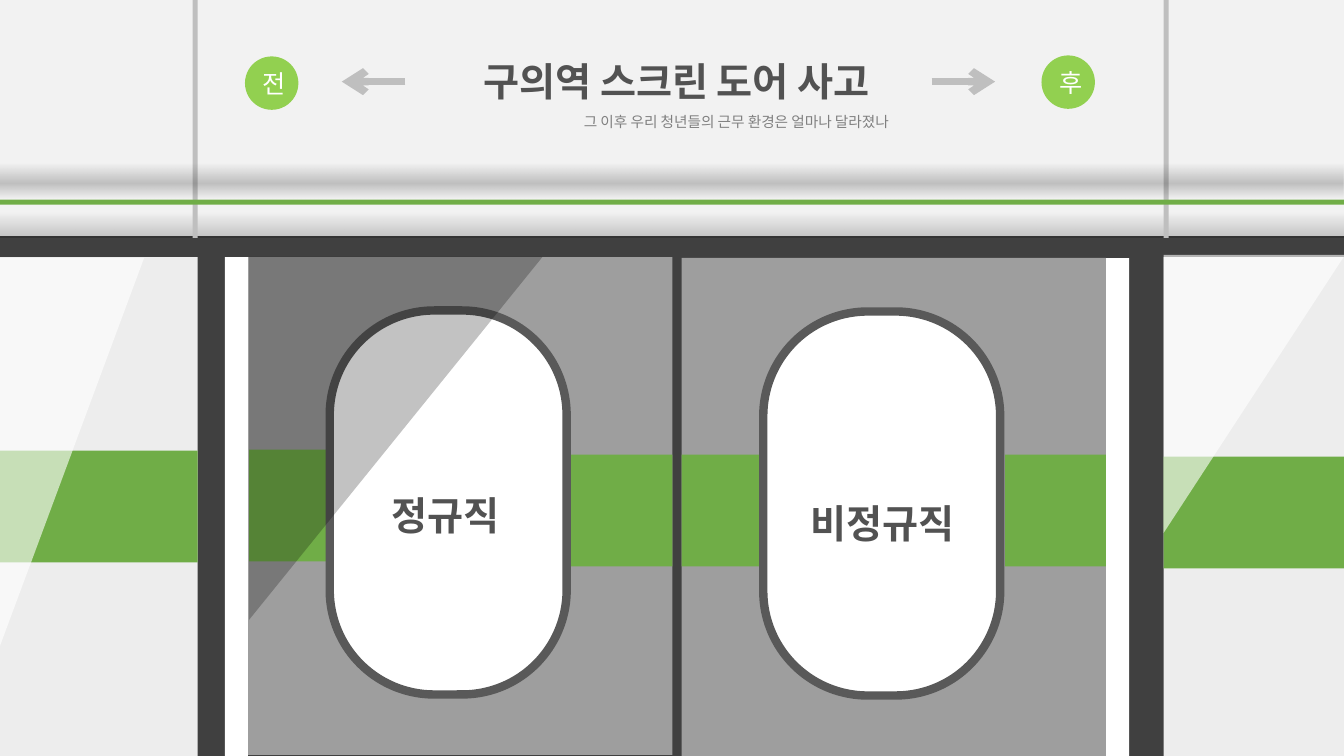
from pptx import Presentation
from pptx.dml.color import RGBColor
from pptx.enum.shapes import MSO_CONNECTOR, MSO_SHAPE
from pptx.enum.text import MSO_ANCHOR, MSO_AUTO_SIZE, PP_ALIGN
from pptx.oxml import parse_xml
from pptx.oxml.ns import nsdecls, qn
from pptx.util import Inches, Pt
from lxml import etree

RECT = MSO_SHAPE.RECTANGLE
ROUNDED = MSO_SHAPE.ROUNDED_RECTANGLE
TRIANGLE = MSO_SHAPE.RIGHT_TRIANGLE
OVAL = MSO_SHAPE.OVAL
STRAIGHT = MSO_CONNECTOR.STRAIGHT
MIDDLE = MSO_ANCHOR.MIDDLE
GROW = MSO_AUTO_SIZE.SHAPE_TO_FIT_TEXT
CENTER, RIGHT = PP_ALIGN.CENTER, PP_ALIGN.RIGHT
FONT = "Noto Sans CJK KR"
WALL, POST, DOOR, GREEN, WHITE = "F2F2F2", "BFBFBF", "9E9E9E", "70AD47", "FFFFFF"
WIDTH = 13.33

deck = Presentation()
deck.slide_width, deck.slide_height = Inches(WIDTH), Inches(7.5)
page = deck.slides.add_slide(deck.slide_layouts[6])
page.background.fill.solid()
page.background.fill.fore_color.rgb = RGBColor.from_string("404040")


def add_block(kind, left, top, width, height, color, opacity=100):
    block = page.shapes.add_shape(kind, Inches(left), Inches(top), Inches(width), Inches(height))
    block.shadow.inherit = False
    block.line.fill.background()
    if isinstance(opacity, dict):
        block.fill.background()
        stops = "".join(
            f'<a:gs pos="{stop * 1000}"><a:srgbClr val="{color}">'
            f'<a:alpha val="{alpha * 1000}"/></a:srgbClr></a:gs>'
            for stop, alpha in opacity.items())
        gradient = parse_xml(f'<a:gradFill {nsdecls("a")} rotWithShape="1"><a:gsLst>{stops}</a:gsLst>'
                             '<a:lin ang="5400000" scaled="0"/></a:gradFill>')
        properties = block._element.spPr
        properties.replace(properties.find(qn("a:noFill")), gradient)
    else:
        block.fill.solid()
        block.fill.fore_color.rgb = RGBColor.from_string(color)
        if opacity < 100:
            tint = block._element.spPr.find(qn("a:solidFill"))[0]
            etree.SubElement(tint, qn("a:alpha")).set("val", str(opacity * 1000))
    if kind == TRIANGLE:
        block._element.spPr.find(qn("a:xfrm")).set("flipV", "1")
    return block


def write(box, text, size, color, bold=False, align=CENTER, spacing=None):
    box.text_frame.word_wrap = True
    para = box.text_frame.paragraphs[0]
    para.alignment = align
    para.line_spacing = spacing
    span = para.add_run()
    span.text = text
    span.font.size, span.font.bold, span.font.name = Pt(size), bold, FONT
    span.font.color.rgb = RGBColor.from_string(color)
    etree.SubElement(span.font._element, qn("a:ea")).set("typeface", FONT)


add_block(RECT, 0, 0, WIDTH, 1.6, WALL)
add_block(RECT, 0, 1.6, WIDTH, 0.74, WALL)
add_block(RECT, 0, 2.11, WIDTH, 0.25, "000000", {0: 0, 100: 21})
for left in (1.91, 11.54):
    add_block(RECT, left, -0.01, 0.05, 2.37, POST)

side_panels = [(0, 1.96, 4.47), (11.54, 1.8, 4.53)]
for left, width, band_top in side_panels:
    add_block(RECT, left, 2.55, width, 4.95, WHITE, 91)
for door_left, edge_left, top in [(2.46, 2.23, 2.55), (6.76, 10.97, 2.56)]:
    add_block(RECT, door_left, top, 4.21, 4.94, DOOR)
    add_block(RECT, edge_left, top, 0.23, 4.95, WHITE)
for left, width, band_top in side_panels:
    add_block(RECT, left, band_top, width, 1.11, GREEN)
add_block(RECT, 0, 1.98, WIDTH, 0.05, GREEN)
for left, top, width, height in [(0, 2.56, 1.43, 3.85), (11.54, 2.53, 1.8, 2.76)]:
    add_block(TRIANGLE, left, top, width, height, WHITE, 61)

for left, top, width in [(2.47, 4.46, 0.8), (5.64, 4.51, 1.03), (6.76, 4.51, 0.81), (9.97, 4.51, 1)]:
    add_block(RECT, left, top, width, 1.11, GREEN)
for left, top in [(3.27, 3.08), (7.57, 3.09)]:
    window = add_block(ROUNDED, left, top, 2.35, 3.81, WHITE)
    window.adjustments[0] = 0.441
    window.line.color.rgb = RGBColor.from_string("595959")
    window.line.width = Pt(6)
add_block(TRIANGLE, 2.47, 2.55, 2.91, 3.6, "000000", 24)
add_block(RECT, 0, 1.62, WIDTH, 0.35, "000000", {0: 0, 56: 21, 100: 0})

labels = [
    (3.25, 4.59, 2.34, 0.7, "정규직", 28, "525252", True, CENTER),
    (7.58, 4.67, 2.34, 0.7, "비정규직", 28, "525252", True, CENTER),
    (3.76, 0.29, 5.9, 0.7, "구의역 스크린 도어 사고", 28, "525252", True, CENTER),
    (4.99, 0.98, 3.96, 0.33, "그 이후 우리 청년들의 근무 환경은 얼마나 달라졌나 ", 10.5, "808080", False, RIGHT),
]
for left, top, width, height, text, size, color, bold, align in labels:
    box = page.shapes.add_textbox(Inches(left), Inches(top), Inches(width), Inches(height))
    box.text_frame.auto_size = GROW
    write(box, text, size, color, bold, align, 1.5)

for start, end in [(4.02, 3.39), (9.24, 9.87)]:
    arrow = page.shapes.add_connector(STRAIGHT, Inches(start), Inches(0.81), Inches(end), Inches(0.81))
    arrow.line.color.rgb = RGBColor.from_string(POST)
    arrow.line.width = Pt(5.5)
    etree.SubElement(arrow.line._get_or_add_ln(), qn("a:tailEnd")).set("type", "arrow")
    etree.SubElement(arrow._element.spPr, qn("a:effectLst"))

for left, top, text in [(2.43, 0.56, "전"), (10.33, 0.55, "후")]:
    badge = add_block(OVAL, left, top, 0.53, 0.53, "92D050")
    badge.text_frame.vertical_anchor = MIDDLE
    write(badge, text, 18, WHITE)

deck.save("out.pptx")
